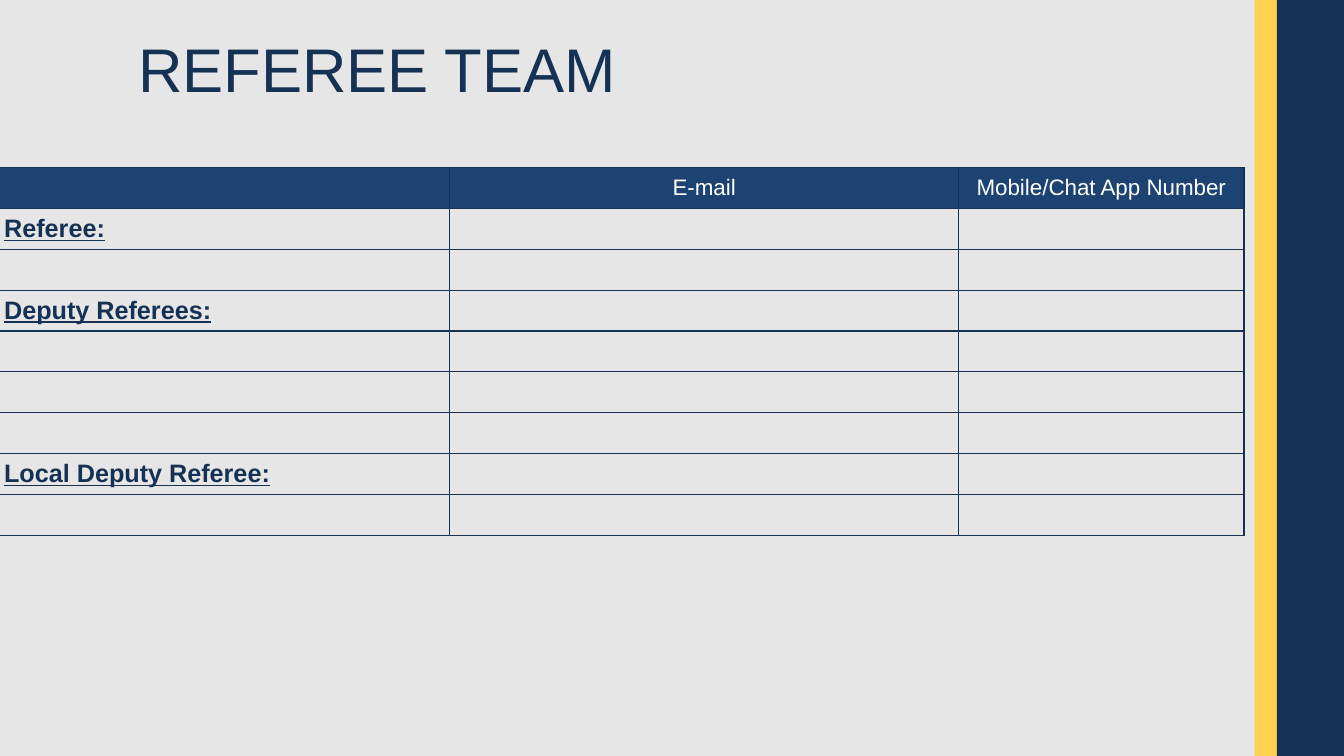
from dataclasses import dataclass

import pptx
import pptx.dml.color
import pptx.enum.shapes
import pptx.enum.text
import pptx.util
from lxml import etree
from pptx.util import Cm

DRAWING = "{http://schemas.openxmlformats.org/drawingml/2006/main}"


@dataclass(frozen=True)
class Theme:
    background: str = "E7E6E6"
    navy: str = "153255"
    header_blue: str = "1C4372"
    gold: str = "FFD24F"
    white: str = "FFFFFF"
    font: str = "Arial"
    title_size: int = 44
    header_size: int = 16
    role_size: int = 18
    border_width: int = 1


THEME = Theme()
SLIDE_WIDTH, SLIDE_HEIGHT = Cm(33.87), Cm(19.05)
COLUMN_WIDTHS = (Cm(11.48), Cm(12.83), Cm(7.19))
ROW_HEIGHT = Cm(1.03)
HEADERS = ("", "E-mail", "Mobile/Chat App Number")
# First column below the header: each role is followed by its blank entry rows
ROLES = ("Referee:", "", "Deputy Referees:", "", "", "", "Local Deputy Referee:", "")


def rgb(color):
    return pptx.dml.color.RGBColor.from_string(color)


def style_paragraph(paragraph, size, color, emphasis=False):
    font = paragraph.font
    font.name = THEME.font
    font.size = pptx.util.Pt(size)
    font.color.rgb = rgb(color)
    if emphasis:
        font.bold = font.underline = True


def add_bar(slide, left, width, color):
    bar = slide.shapes.add_shape(
        pptx.enum.shapes.MSO_SHAPE.RECTANGLE, left, 0, width, SLIDE_HEIGHT)
    bar.shadow.inherit = False
    bar.fill.solid()
    bar.fill.fore_color.rgb = rgb(color)
    bar.line.fill.background()


def add_title(slide, text):
    title = slide.shapes.add_textbox(Cm(3.23), 0, Cm(24.74), Cm(3.68))
    frame = title.text_frame
    frame.word_wrap = True
    frame.vertical_anchor = pptx.enum.text.MSO_ANCHOR.MIDDLE
    paragraph = frame.paragraphs[0]
    paragraph.text = text
    paragraph.line_spacing = 0.9
    style_paragraph(paragraph, THEME.title_size, THEME.navy)


def add_borders(cell):
    properties = cell._tc.get_or_add_tcPr()
    for side in ("lnL", "lnR", "lnT", "lnB"):
        line = etree.SubElement(properties, DRAWING + side,
                                w=str(pptx.util.Pt(THEME.border_width)))
        fill = etree.SubElement(line, DRAWING + "solidFill")
        etree.SubElement(fill, DRAWING + "srgbClr", val=THEME.navy)


def fill_cell(cell, text, is_header):
    add_borders(cell)
    cell.vertical_anchor = pptx.enum.text.MSO_ANCHOR.MIDDLE
    paragraph = cell.text_frame.paragraphs[0]
    paragraph.text = text
    if is_header:
        cell.fill.solid()
        cell.fill.fore_color.rgb = rgb(THEME.header_blue)
        paragraph.alignment = pptx.enum.text.PP_ALIGN.CENTER
        style_paragraph(paragraph, THEME.header_size, THEME.white)
    else:
        cell.fill.background()
        style_paragraph(paragraph, THEME.role_size, THEME.navy, emphasis=True)


def add_contact_table(slide):
    rows = [HEADERS] + [(role, "", "") for role in ROLES]
    table = slide.shapes.add_table(
        len(rows), len(HEADERS), Cm(-0.15), Cm(4.22),
        sum(COLUMN_WIDTHS), ROW_HEIGHT * len(rows)).table
    table.first_row = table.horz_banding = False
    for column, width in zip(table.columns, COLUMN_WIDTHS):
        column.width = width
    for row_index, texts in enumerate(rows):
        table.rows[row_index].height = ROW_HEIGHT
        for column_index, text in enumerate(texts):
            fill_cell(table.cell(row_index, column_index), text, row_index == 0)


def main():
    presentation = pptx.Presentation()
    presentation.slide_width = SLIDE_WIDTH
    presentation.slide_height = SLIDE_HEIGHT
    slide = presentation.slides.add_slide(presentation.slide_layouts[6])
    slide.background.fill.solid()
    slide.background.fill.fore_color.rgb = rgb(THEME.background)

    # Side bars, bleeding over the right edge
    add_bar(slide, Cm(31.62), Cm(5.26), THEME.gold)
    add_bar(slide, Cm(32.18), Cm(4.7), THEME.navy)

    # Title and contact table
    add_title(slide, "REFEREE TEAM")
    add_contact_table(slide)

    presentation.save("out.pptx")


if __name__ == "__main__":
    main()
